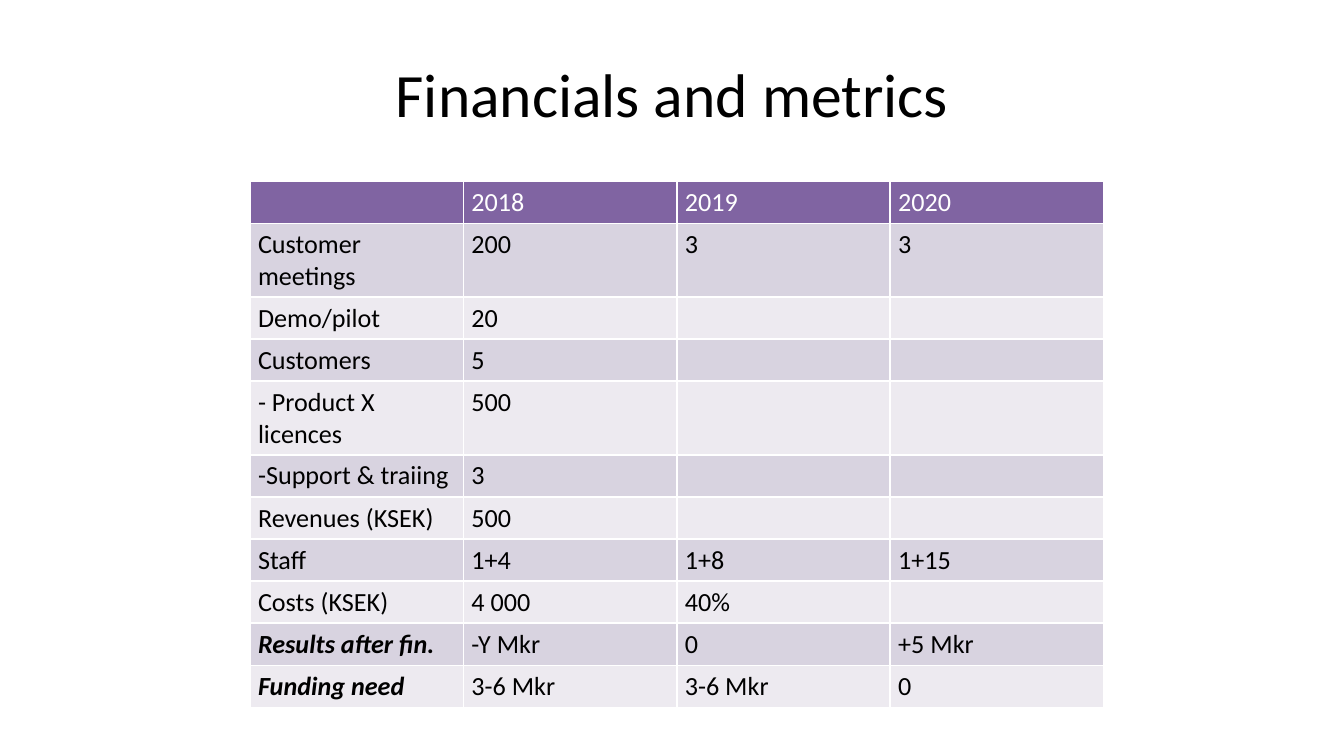
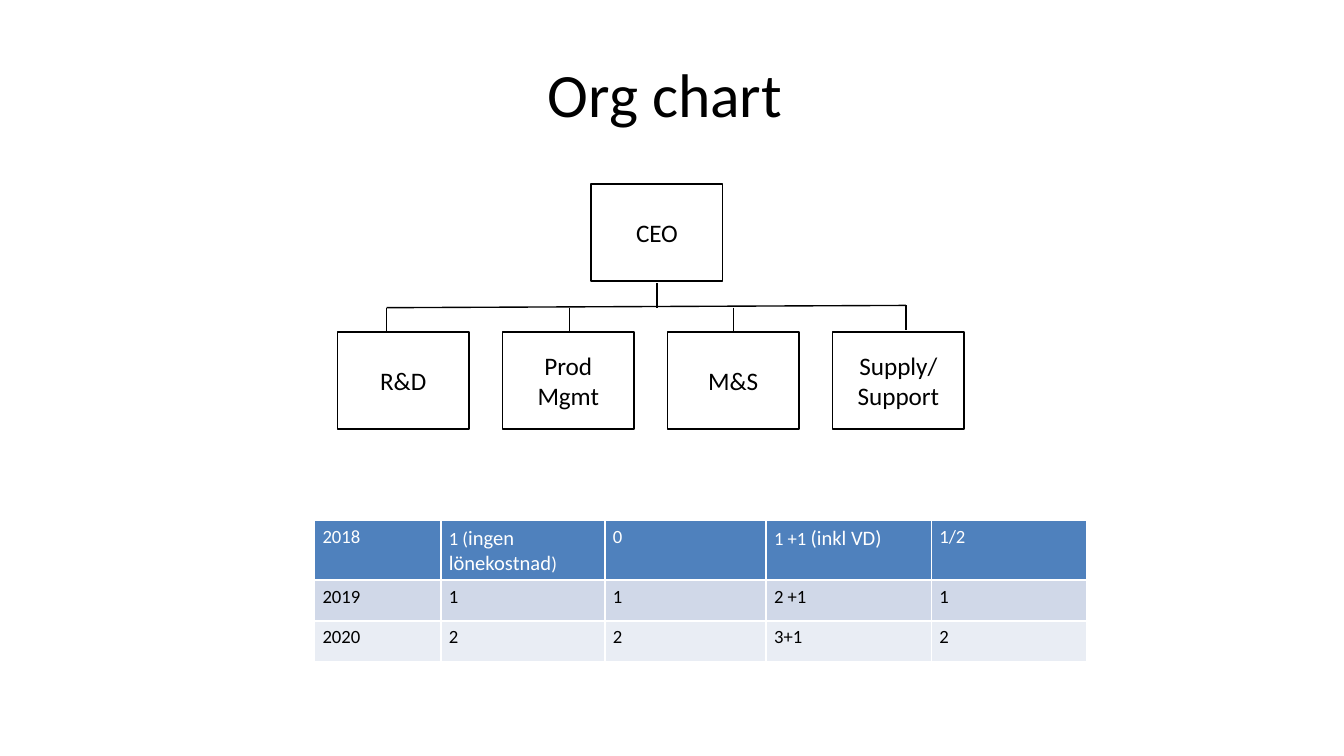
from lxml.etree import SubElement
from pptx import Presentation
from pptx.dml.color import RGBColor
from pptx.enum.shapes import MSO_CONNECTOR as Connector, MSO_SHAPE as Shape
from pptx.enum.text import MSO_ANCHOR as Anchor, PP_ALIGN as Align
from pptx.oxml.ns import qn
from pptx.util import Inches, Pt

WIDTH = Inches(10)
HEIGHT = WIDTH * 9 // 16
FONT = "Calibri"
BLACK, WHITE = "000000", "FFFFFF"
PURPLE = ("8064A2", "D8D3E0", "EDEAF0")
BLUE = ("4F81BD", "D0D8E8", "E9EDF4")
STRONG = {"bold": True, "italic": True}
LARGER = {"size": Pt(11)}
BOX_WIDTH, BOX_HEIGHT = 9.8, 12.85
UNIT_LEFT, UNIT_TOP, UNIT_STEP = 25.1, 43.92, 12.28
BAR_LEFT, BAR_RIGHT, BAR_LOW, BAR_HIGH = 28.77, 67.4, 40.7, 40.4

FINANCIALS = [
    ["", "2018", "2019", "2020"],
    ["Customer meetings", "200", "3", "3"],
    ["Demo/pilot", "20", "", ""],
    ["Customers", "5", "", ""],
    ["- Product X licences", "500", "", ""],
    ["-Support & traiing", "3", "", ""],
    ["Revenues (KSEK)", "500", "", ""],
    ["Staff", "1+4", "1+8", "1+15"],
    ["Costs (KSEK)", "4 000", "40%", ""],
    [[("Results after fin.", STRONG)], "-Y Mkr", "0", "+5 Mkr"],
    [[("Funding need", STRONG)], "3-6 Mkr", "3-6 Mkr", "0"],
]
STAFFING = [
    ["2018", [("1 (", {}), ("ingen lönekostnad", LARGER), (")", {})], "0",
     [("1 +1 ", {}), ("(inkl VD)", LARGER)], "1/2"],
    ["2019", "1", "1", "2 +1", "1"],
    ["2020", "2", "2", "3+1", "2"],
]
UNITS = ["R&D", "Prod Mgmt", "M&S", "Supply/Support"]
BRANCHES = [
    (BAR_LEFT, BAR_LOW, BAR_RIGHT, BAR_HIGH),
    (BAR_LEFT, BAR_LOW, BAR_LEFT, UNIT_TOP),
    (BAR_RIGHT, BAR_HIGH, BAR_RIGHT, 43.7),
    (42.36, BAR_LOW, 42.36, UNIT_TOP),
    (54.6, BAR_LOW, 54.6, UNIT_TOP),
    (48.9, 37.5, 48.9, BAR_LOW),
]


def color(code):
    """Turn a hex string into a colour."""
    return RGBColor.from_string(code)


def across(percent):
    """Return a share of the slide's width."""
    return round(WIDTH * percent / 100)


def down(percent):
    """Return a share of the slide's height."""
    return round(HEIGHT * percent / 100)


def area(left, top, width, height):
    """Return a rectangle given in percent of the slide."""
    return across(left), down(top), across(width), down(height)


def apply(target, values):
    """Set every attribute in a dict of format values."""
    for key, value in values.items():
        setattr(target, key, value)


def margins(side):
    """Return text margins with the given width at the sides."""
    return {
        "margin_left": Inches(side), "margin_right": Inches(side),
        "margin_top": Inches(0.04), "margin_bottom": Inches(0.04),
    }


def write(frame, content, size, ink=BLACK, align=Align.LEFT):
    """Write a string or a list of formatted runs into a text frame."""
    paragraph = frame.paragraphs[0]
    paragraph.alignment = align
    pieces = [(content, {})] if isinstance(content, str) else content
    for words, changes in pieces:
        if words:
            run = paragraph.add_run()
            run.text = words
            base = {"name": FONT, "size": Pt(size), "bold": False, "italic": False}
            apply(run.font, base | changes)
            run.font.color.rgb = color(ink)
    SubElement(paragraph._p, qn("a:endParaRPr"), sz=str(round(size * 100)))


def write_centred(frame, content, size):
    """Write wrapping text in the middle of a text frame."""
    apply(frame, margins(0.07) | {"word_wrap": True, "vertical_anchor": Anchor.MIDDLE})
    write(frame, content, size, align=Align.CENTER)


def add_titled_slide(deck, title):
    """Add a blank slide with the shared title style."""
    slide = deck.slides.add_slide(deck.slide_layouts[6])
    heading = slide.shapes.add_textbox(*area(5, 4, 90, 16.67))
    write_centred(heading.text_frame, title, 33)
    return slide


def edge_cell(cell):
    """Draw thin white borders round a cell."""
    properties = cell._tc.get_or_add_tcPr()
    for side in "LRTB":
        edge = SubElement(properties, qn(f"a:ln{side}"), w=str(Pt(1)))
        SubElement(SubElement(edge, qn("a:solidFill")), qn("a:srgbClr"), val=WHITE)


def add_banded_table(slide, rows, corner, widths, heights, size, palette):
    """Add a table with a coloured header and alternating bands."""
    header, *bands = palette
    place = area(*corner, sum(widths), sum(heights))
    table = slide.shapes.add_table(len(rows), len(widths), *place).table
    for column, width in zip(table.columns, widths):
        column.width = across(width)
    for r, (row, height) in enumerate(zip(rows, heights)):
        table.rows[r].height = down(height)
        for c, content in enumerate(row):
            cell = table.cell(r, c)
            apply(cell, margins(0.06))
            edge_cell(cell)
            cell.fill.solid()
            cell.fill.fore_color.rgb = color(bands[(r - 1) % 2] if r else header)
            write(cell.text_frame, content, size, BLACK if r else WHITE)


def outline(line):
    """Give a line the thin black style of the organisation."""
    line.color.rgb = color(BLACK)
    line.width = Pt(0.75)


def add_unit(slide, label, left, top):
    """Add one box of the organisation."""
    unit = slide.shapes.add_shape(
        Shape.RECTANGLE, *area(left, top, BOX_WIDTH, BOX_HEIGHT))
    unit.shadow.inherit = False
    unit.fill.solid()
    unit.fill.fore_color.rgb = color(WHITE)
    outline(unit.line)
    write_centred(unit.text_frame, label, 13.5)


def add_branch(slide, x1, y1, x2, y2):
    """Add a thin line between two points."""
    branch = slide.shapes.add_connector(
        Connector.STRAIGHT, across(x1), down(y1), across(x2), down(y2))
    outline(branch.line)
    SubElement(branch._element.spPr, qn("a:effectLst"))


def build_financials(deck):
    """Build the slide with yearly figures."""
    slide = add_titled_slide(deck, "Financials and metrics")
    heights = [9.42 if row in (1, 4) else 5.33 for row in range(len(FINANCIALS))]
    add_banded_table(slide, FINANCIALS, (18.6, 24), [15.88] * 4, heights, 14, PURPLE)


def build_organisation(deck):
    """Build the slide with the organisation and its staffing."""
    slide = add_titled_slide(deck, "Org chart ")
    add_unit(slide, "CEO", 43.98, 24.36)
    for position, label in enumerate(UNITS):
        add_unit(slide, label, UNIT_LEFT + position * UNIT_STEP, UNIT_TOP)
    for branch in BRANCHES:
        add_branch(slide, *branch)
    add_banded_table(slide, STAFFING, (23.4, 68.8), [9.4, 12.2, 12, 12.3, 11.6],
                     [7.47, 5.4, 5.4], 10, BLUE)


def main():
    """Build the deck and save it."""
    deck = Presentation()
    apply(deck, {"slide_width": WIDTH, "slide_height": HEIGHT})
    build_financials(deck)
    build_organisation(deck)
    deck.save("out.pptx")


if __name__ == "__main__":
    main()
